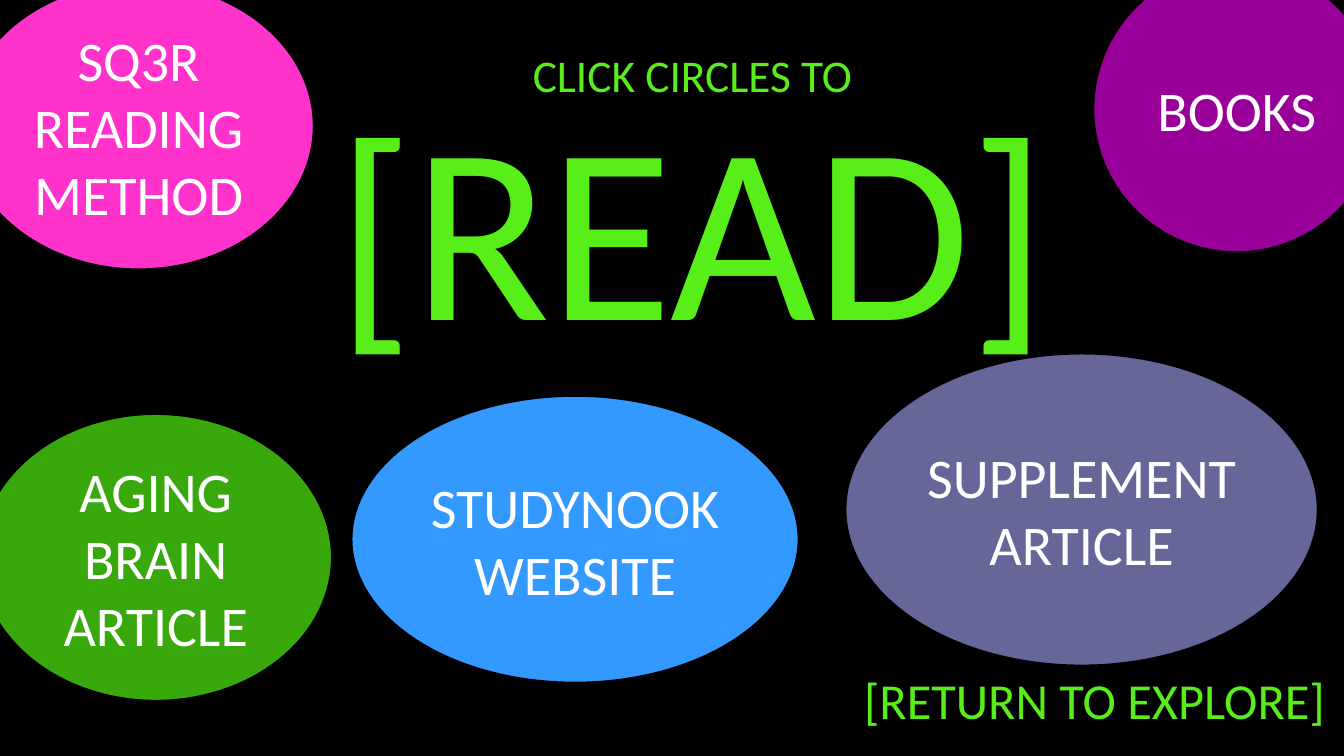
import pptx
import pptx.dml.color
import pptx.enum.shapes
import pptx.enum.text
import pptx.util

Pt = pptx.util.Pt
RGBColor = pptx.dml.color.RGBColor
ANCHOR = pptx.enum.text.MSO_ANCHOR

BLACK = RGBColor(0x00, 0x00, 0x00)
WHITE = RGBColor(0xFF, 0xFF, 0xFF)
LIME = RGBColor(0x57, 0xEE, 0x1A)
PINK = RGBColor(0xFF, 0x33, 0xCC)
PURPLE = RGBColor(0x99, 0x00, 0x99)
SLATE = RGBColor(0x66, 0x66, 0x99)
GREEN = RGBColor(0x39, 0xA8, 0x0C)
BLUE = RGBColor(0x33, 0x99, 0xFF)

TOPICS = [
    ("SQ3R READING METHOD", PINK, (-25.92, -12.24, 249.84, 204.48)),
    ("BOOKS", PURPLE, (781.2, -24.48, 204.48, 204.48)),
    ("SUPPLEMENT ARTICLE", SLATE, (604.08, 252.72, 336.96, 222.48)),
    ("AGING BRAIN ARTICLE", GREEN, (-14.4, 295.92, 251.28, 204.48)),
    ("STUDYNOOK WEBSITE", BLUE, (251.28, 282.96, 318.96, 204.48)),
]


def add_text(paragraph, text, *, size, color, font="Calibri"):
    run = paragraph.add_run()
    run.text = text
    run.font.name = font
    run.font.size = Pt(size)
    run.font.color.rgb = color


def centred_paragraph(frame, anchor):
    frame.word_wrap = True
    frame.vertical_anchor = anchor
    paragraph = frame.paragraphs[0]
    paragraph.alignment = pptx.enum.text.PP_ALIGN.CENTER
    return paragraph


def add_label(slide, box, anchor):
    label = slide.shapes.add_textbox(*map(Pt, box))
    return centred_paragraph(label.text_frame, anchor)


def add_topic(slide, text, color, box):
    topic = slide.shapes.add_shape(
        pptx.enum.shapes.MSO_SHAPE.OVAL, *map(Pt, box))
    topic.shadow.inherit = False
    topic.fill.solid()
    topic.fill.fore_color.rgb = color
    topic.line.color.rgb = BLACK
    topic.line.width = Pt(1)
    caption = centred_paragraph(topic.text_frame, ANCHOR.MIDDLE)
    add_text(caption, text, size=40, color=WHITE)


def main():
    deck = pptx.Presentation()
    deck.slide_width = Pt(960)
    deck.slide_height = Pt(540)
    slide = deck.slides.add_slide(deck.slide_layouts[6])
    slide.background.fill.solid()
    slide.background.fill.fore_color.rgb = BLACK

    heading = add_label(slide, (216.72, 40.32, 555.84, 225.36), ANCHOR.MIDDLE)
    heading.line_spacing = 0.9
    add_text(heading, "CLICK CIRCLES TO", size=32.4, color=LIME)
    heading.add_line_break()
    add_text(heading, "[READ]", size=180, color=LIME)

    for text, color, box in TOPICS:
        add_topic(slide, text, color, box)

    return_label = add_label(slide, (604.08, 474.48, 355.68, 51.12), ANCHOR.TOP)
    add_text(return_label, "[RETURN TO EXPLORE]", size=36, color=LIME)

    deck.save("out.pptx")


if __name__ == "__main__":
    main()
